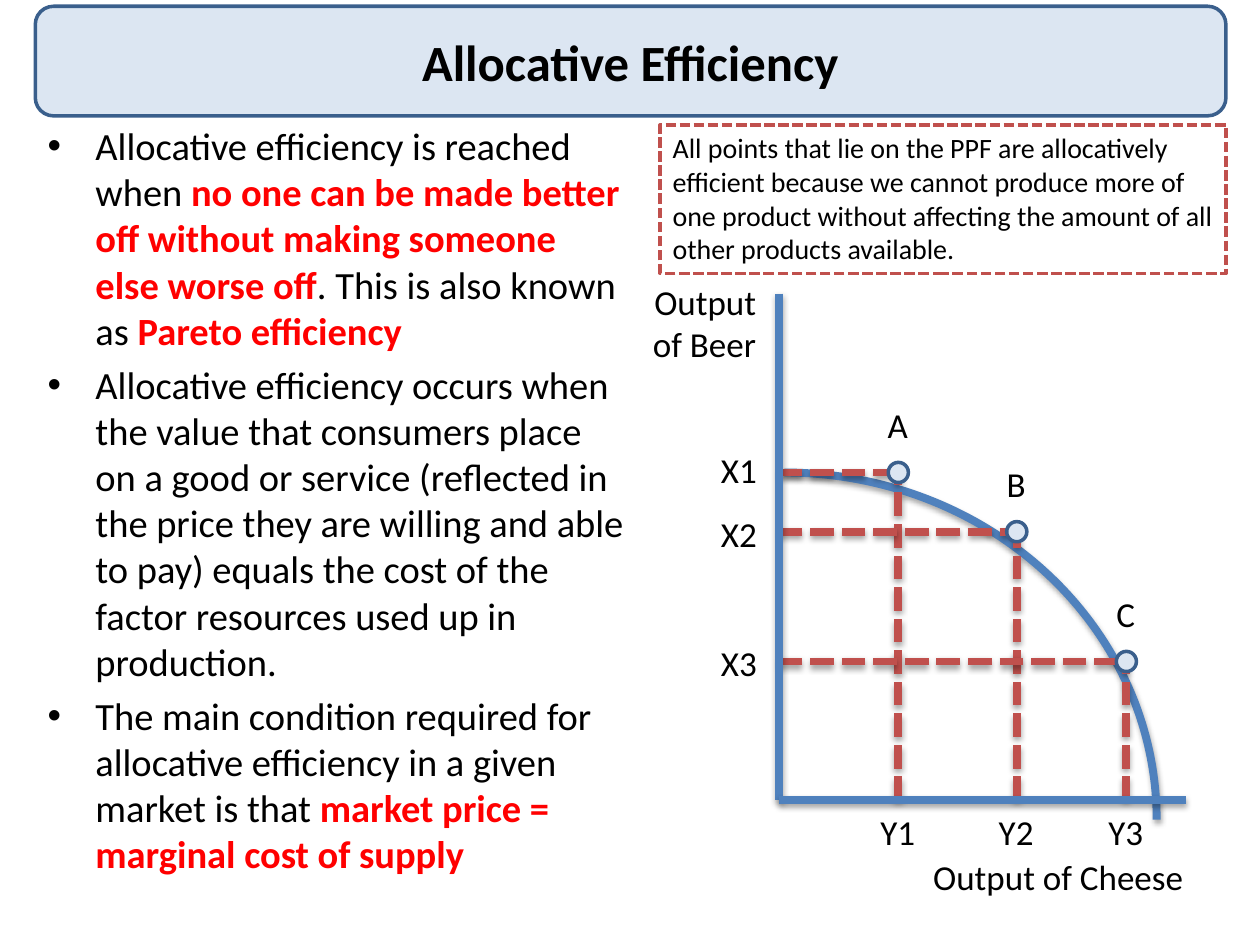
import dataclasses
import typing

import lxml.etree
import pptx
import pptx.dml.color
import pptx.enum.dml
import pptx.enum.shapes
import pptx.enum.text
import pptx.oxml
import pptx.oxml.ns
import pptx.util

PX = 9144  # EMU per px, at 100 px to the inch
SHAPE = pptx.enum.shapes.MSO_SHAPE
ALIGN = pptx.enum.text.PP_ALIGN
ANCHOR = pptx.enum.text.MSO_ANCHOR
DASHED = pptx.enum.dml.MSO_LINE.SQUARE_DOT


@dataclasses.dataclass(frozen=True)
class Theme:
    font: str = "Calibri"
    ink: str = "000000"
    emphasis: str = "FF0000"
    paper: str = "FFFFFF"
    panel: str = "DCE6F2"
    outline: str = "3A5F8C"
    curve: str = "4F81BD"
    guide: str = "C0504D"
    title_size: int = 29
    body_size: int = 22
    label_size: int = 20
    callout_size: int = 16
    thin: float = 2
    thick: float = 4.5


class Box(typing.NamedTuple):
    left: int
    top: int
    width: int
    height: int


class Phrase(typing.NamedTuple):
    text: str
    strong: bool = False


class PpfPoint(typing.NamedTuple):
    name: str
    x: int
    y: int
    x_label: str
    x_label_top: int
    y_label: str


THEME = Theme()
AXIS_LEFT, AXIS_TOP, AXIS_RIGHT, AXIS_BOTTOM = 618, 233, 941, 635
MARKER = 16

POINTS = [
    PpfPoint("A", 713, 375, "X1", 351, "Y1"),
    PpfPoint("B", 807, 422, "X2", 402, "Y2"),
    PpfPoint("C", 894, 525, "X3", 504, "Y3"),
]

EXPLANATION = [
    [Phrase("Allocative efficiency is reached when "),
     Phrase("no one can be made better off without making someone else worse off", True),
     Phrase(". This is also known as "),
     Phrase("Pareto efficiency", True)],
    [Phrase("Allocative efficiency occurs when the value that consumers place on a good "
            "or service (reflected in the price they are willing and able to pay) equals "
            "the cost of the factor resources used up in production.")],
    [Phrase("The main condition required for allocative efficiency in a given market is that "),
     Phrase("market price = marginal cost of supply", True)],
]


def rgb(code: str):
    return pptx.dml.color.RGBColor.from_string(code)


def apply(target, values: dict) -> None:
    for name, value in values.items():
        setattr(target, name, value)


def emu(*lengths: int) -> list:
    return [pptx.util.Emu(length * PX) for length in lengths]


def style_line(line, color: str, width: float, dash=None) -> None:
    line.color.rgb = rgb(color)
    apply(line, {"width": pptx.util.Pt(width), "dash_style": dash})


def style_run(run, size: int, color: str = THEME.ink, bold: bool = False) -> None:
    apply(run.font, {"name": THEME.font, "size": pptx.util.Pt(size), "bold": bold})
    run.font.color.rgb = rgb(color)


def cast_shadow(shape) -> None:
    """Soft shadow straight below the line."""
    properties = shape._element.spPr
    for old in properties.findall(pptx.oxml.ns.qn("a:effectLst")):
        properties.remove(old)
    properties.append(pptx.oxml.parse_xml(
        f'<a:effectLst {pptx.oxml.ns.nsdecls("a")}>'
        '<a:outerShdw blurRad="40000" dist="23000" dir="5400000" rotWithShape="0">'
        '<a:srgbClr val="000000"><a:alpha val="35000"/></a:srgbClr>'
        '</a:outerShdw></a:effectLst>'))


def add_shape(slide, kind, box: Box, fill: typing.Optional[str], color: str,
              width: float, dash=None):
    shape = slide.shapes.add_shape(kind, *emu(*box))
    shape.shadow.inherit = False
    if fill:
        shape.fill.solid()
        shape.fill.fore_color.rgb = rgb(fill)
    else:
        shape.fill.background()
    style_line(shape.line, color, width, dash)
    return shape


def add_line(slide, start: tuple, end: tuple, color: str, dash=None) -> None:
    line = slide.shapes.add_connector(
        pptx.enum.shapes.MSO_CONNECTOR.STRAIGHT, *emu(*start, *end))
    style_line(line.line, color, THEME.thick, dash)
    cast_shadow(line)


def write(shape, text: str, size: int, align, anchor=ANCHOR.TOP, bold: bool = False) -> None:
    apply(shape.text_frame, {"word_wrap": True, "vertical_anchor": anchor})
    paragraph = shape.text_frame.paragraphs[0]
    apply(paragraph, {"text": text, "alignment": align})
    for run in paragraph.runs:
        style_run(run, size, bold=bold)


def add_label(slide, text: str, box: Box, align=ALIGN.CENTER) -> None:
    write(slide.shapes.add_textbox(*emu(*box)), text, THEME.label_size, align)


def add_bullets(slide, box: Box, bullets: list) -> None:
    frame = slide.shapes.add_textbox(*emu(*box)).text_frame
    frame.word_wrap = True
    for index, phrases in enumerate(bullets):
        paragraph = frame.add_paragraph() if index else frame.paragraphs[0]
        paragraph.space_before = pptx.util.Pt(4.4 if index else 0)
        properties = paragraph._p.get_or_add_pPr()
        for name, value in {"marL": 38 * PX, "indent": -38 * PX}.items():
            properties.set(name, str(value))
        lxml.etree.SubElement(properties, pptx.oxml.ns.qn("a:buFont"), typeface="Arial")
        lxml.etree.SubElement(properties, pptx.oxml.ns.qn("a:buChar"), char="•")
        for phrase in phrases:
            run = paragraph.add_run()
            run.text = phrase.text
            color = THEME.emphasis if phrase.strong else THEME.ink
            style_run(run, THEME.body_size, color, phrase.strong)


def add_diagram(slide) -> None:
    # Dashed guides from the axes to each point
    for point in reversed(POINTS):
        add_line(slide, (point.x, AXIS_BOTTOM), (point.x, point.y - MARKER // 2),
                 THEME.guide, DASHED)
    for point in reversed(POINTS):
        add_line(slide, (AXIS_LEFT, point.y), (point.x, point.y), THEME.guide, DASHED)

    # Axes
    origin = (AXIS_LEFT, AXIS_BOTTOM)
    add_line(slide, (AXIS_LEFT, AXIS_TOP), origin, THEME.curve)
    add_line(slide, origin, (AXIS_RIGHT, AXIS_BOTTOM), THEME.curve)

    # Markers and labels
    for point in POINTS:
        marker = Box(point.x - MARKER // 2, point.y - MARKER // 2, MARKER, MARKER)
        add_shape(slide, SHAPE.OVAL, marker, THEME.panel, THEME.outline, THEME.thin)
        add_label(slide, point.name, Box(point.x - 24, point.y - 60, 47, 44))
        add_label(slide, point.x_label, Box(555, point.x_label_top, 63, 44))
        add_label(slide, point.y_label, Box(point.x - 32, 638, 63, 44))
    add_label(slide, "Output\nof Beer", Box(508, 218, 102, 77), ALIGN.RIGHT)
    add_label(slide, "Output of Cheese", Box(681, 674, 268, 44), ALIGN.RIGHT)


def main() -> None:
    deck = pptx.Presentation()
    apply(deck, dict(zip(("slide_width", "slide_height"), emu(1000, 750))))
    slide = deck.slides.add_slide(deck.slide_layouts[6])

    # Production possibility frontier, behind everything else
    frontier = add_shape(slide, SHAPE.ARC, Box(327, 375, 591, 551), None,
                         THEME.curve, THEME.thick)
    cast_shadow(frontier)

    # Title and explanation
    title = add_shape(slide, SHAPE.ROUNDED_RECTANGLE, Box(28, 5, 945, 87),
                      THEME.panel, THEME.outline, THEME.thin)
    write(title, "Allocative Efficiency", THEME.title_size, ALIGN.CENTER, ANCHOR.MIDDLE, True)
    add_bullets(slide, Box(28, 92, 480, 622), EXPLANATION)

    add_diagram(slide)

    # Callout
    callout = add_shape(slide, SHAPE.RECTANGLE, Box(524, 99, 449, 118),
                        THEME.paper, THEME.guide, THEME.thin, DASHED)
    write(callout, "All points that lie on the PPF are allocatively efficient because we "
          "cannot produce more of one product without affecting the amount of all other "
          "products available.", THEME.callout_size, ALIGN.LEFT)

    deck.save("out.pptx")


if __name__ == "__main__":
    main()
